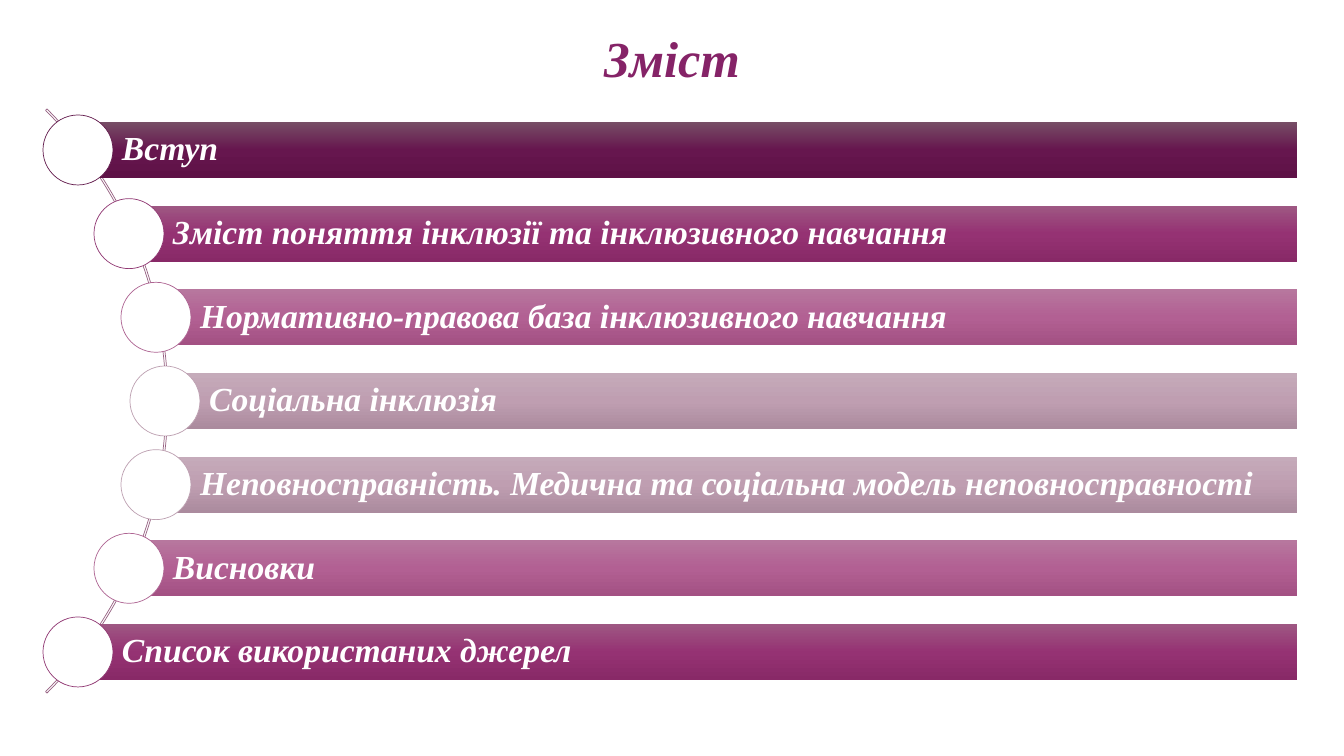
from copy import deepcopy

from pptx import Presentation
from pptx.dml.color import RGBColor
from pptx.enum.shapes import MSO_SHAPE
from pptx.enum.text import MSO_ANCHOR, PP_ALIGN
from pptx.oxml.ns import qn
from pptx.util import Pt

PX = 914400 / 100.8


def rgb(value):
    return RGBColor.from_string(value)


def write(shape, text, size=24, color="FFFFFF", align=PP_ALIGN.LEFT, margins=(7, 7, 7, 7)):
    frame = shape.text_frame
    frame.word_wrap = True
    frame.vertical_anchor = MSO_ANCHOR.MIDDLE
    frame.margin_left, frame.margin_top, frame.margin_right, frame.margin_bottom = (
        round(margin * PX) for margin in margins)
    paragraph = frame.paragraphs[0]
    paragraph.alignment = align
    paragraph.line_spacing = 0.9
    run = paragraph.add_run()
    run.text = text
    font = run.font
    font.name = "Times New Roman"
    font.size = Pt(size)
    font.bold = font.italic = True
    font.color.rgb = rgb(color)


PLUM = (("774E66", "66164E", "5E1146"), "621A4C")
PURPLE = (("9E5883", "953273", "882967"), "903772")
PINK = (("B7779E", "B26093", "A35183"), "AE6492")
MAUVE = (("C5ABBA", "BF9EB1", "AB8B9E"), "BDA0B1")

topics = [
    ("Вступ", 78, PLUM),
    ("Зміст поняття інклюзії та інклюзивного навчання", 129, PURPLE),
    ("Нормативно-правова база інклюзивного навчання", 156, PINK),
    ("Соціальна інклюзія", 165, MAUVE),
    ("Неповносправність. Медична та соціальна модель неповносправності", 156, MAUVE),
    ("Висновки", 129, PINK),
    ("Список використаних джерел", 78, PURPLE),
]

FIRST_CENTER, LAST_CENTER = 150, 652
STEP = (LAST_CENTER - FIRST_CENTER) / (len(topics) - 1)
BAR_RIGHT, BAR_HEIGHT, CIRCLE = 1297, 56, 70
ARC_SIZE = 826

presentation = Presentation()
presentation.slide_width = round(1344 * PX)
presentation.slide_height = round(756 * PX)
slide = presentation.slides.add_slide(presentation.slide_layouts[6])
shapes = slide.shapes

title = shapes.add_textbox(*(round(n * PX) for n in (48, 28, 1248, 66)))
write(title, "Зміст", size=36, color="852367", align=PP_ALIGN.CENTER)

arc = shapes.add_shape(
    MSO_SHAPE.BLOCK_ARC, *(round(n * PX) for n in (-658, -12, ARC_SIZE, ARC_SIZE)))
arc.shadow.inherit = False
arc.adjustments[0] = 189
arc.adjustments[1] = 27
arc.adjustments[2] = 2 / ARC_SIZE
arc.fill.background()
arc.line.color.rgb = rgb("976182")
arc.line.width = Pt(0.5)

for index, (topic, center_x, (shades, outline)) in enumerate(topics):
    center_y = FIRST_CENTER + index * STEP

    bar = shapes.add_shape(MSO_SHAPE.RECTANGLE, *(round(n * PX) for n in (
        center_x, center_y - BAR_HEIGHT / 2, BAR_RIGHT - center_x, BAR_HEIGHT)))
    bar.shadow.inherit = False
    bar.line.fill.background()
    bar.fill.gradient()
    bar.fill.gradient_angle = 270
    stop_list = bar.fill._xPr.find(qn("a:gradFill")).find(qn("a:gsLst"))
    stop_list.append(deepcopy(stop_list[0]))
    for stop, shade, position in zip(bar.fill.gradient_stops, shades, (0, 0.5, 1)):
        stop.color.rgb = rgb(shade)
        stop.position = position
    write(bar, topic, margins=(44, 7, 7, 7))

    circle = shapes.add_shape(MSO_SHAPE.OVAL, *(round(n * PX) for n in (
        center_x - CIRCLE / 2, center_y - CIRCLE / 2, CIRCLE, CIRCLE)))
    circle.shadow.inherit = False
    circle.fill.solid()
    circle.fill.fore_color.rgb = rgb("FFFFFF")
    circle.line.color.rgb = rgb(outline)
    circle.line.width = Pt(0.5)

presentation.save("out.pptx")
